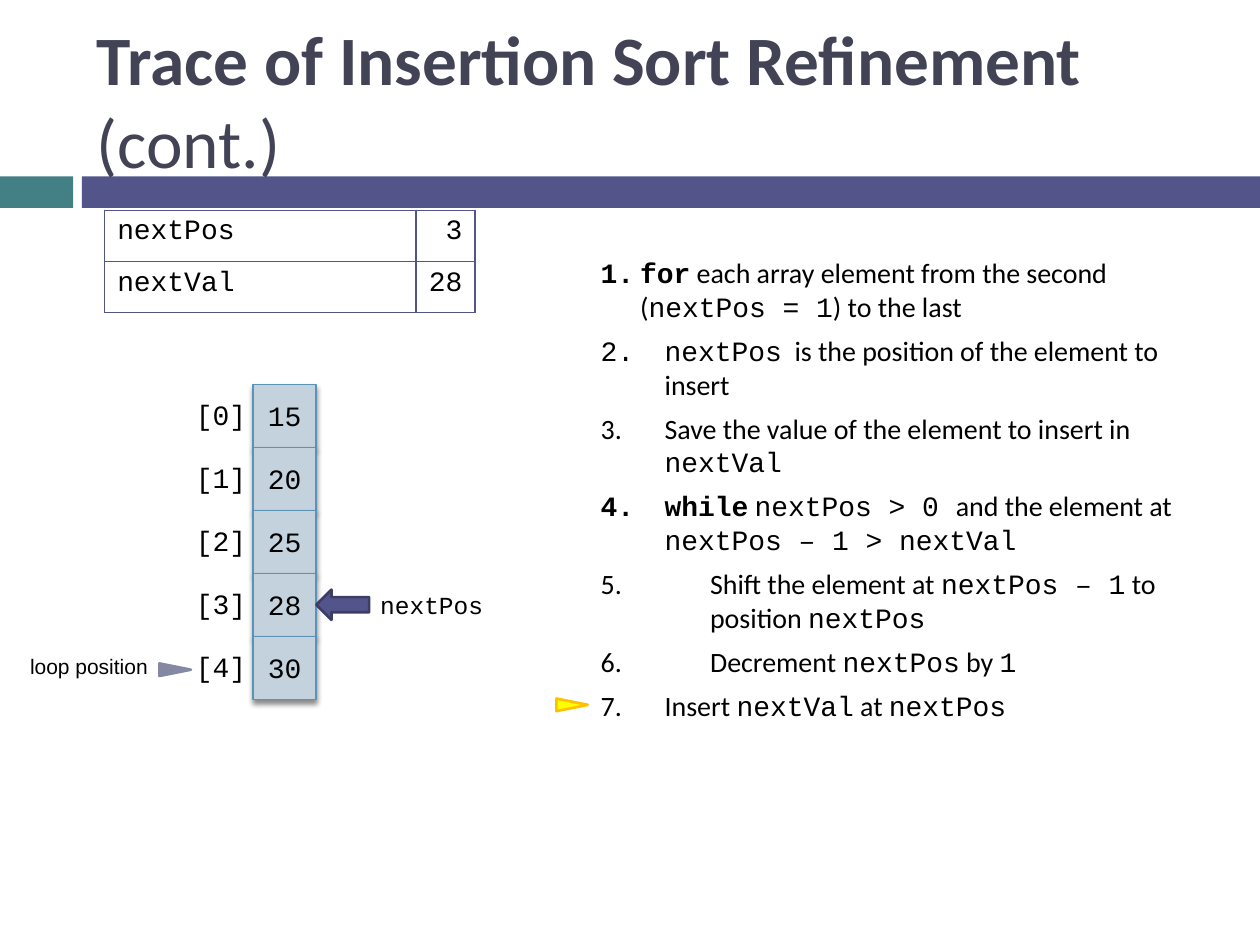
import pptx
import pptx.util
import pptx.dml.color
import pptx.enum.shapes
import pptx.enum.text
import pptx.oxml
import pptx.oxml.ns

Pt = pptx.util.Pt
SHAPE = pptx.enum.shapes.MSO_SHAPE
ALIGN = pptx.enum.text.PP_ALIGN
ANCHOR = pptx.enum.text.MSO_ANCHOR
NS = pptx.oxml.ns.nsdecls("a")

COLORS = {
    "teal": "438086", "indigo": "53548A", "indigo_edge": "3D3E66",
    "title": "424456", "text": "000000", "cell": "C4D2DE",
    "cell_edge": "5C92B5", "loop": "8588A2", "step": "FFFF00",
    "step_edge": "FFC000",
}
PROSE, CODE, LABEL = "Calibri", "Courier New", "Arial"

TITLE = [("Trace of Insertion Sort Refinement ", PROSE, True), ("(cont.)", PROSE, False)]
STEPS = [
    (22.5, [("for", CODE, True), (" each array element from the second (", PROSE, False),
            ("nextPos = 1", CODE, False), (") to the last", PROSE, False)]),
    (36.5, [("nextPos", CODE, False),
            ("  is the position of the element to insert", PROSE, False)]),
    (36.5, [("Save the value of the element to insert in ", PROSE, False),
            ("nextVal", CODE, False)]),
    (36.5, [("while", CODE, True), (" ", PROSE, True), ("nextPos > 0 ", CODE, False),
            ("and the element at ", PROSE, False), ("nextPos – 1 > nextVal", CODE, False)]),
    (62.5, [("Shift the element at ", PROSE, False), ("nextPos – 1", CODE, False),
            (" to position ", PROSE, False), ("nextPos", CODE, False)]),
    (62.5, [("Decrement ", PROSE, False), ("nextPos", CODE, False),
            (" by ", PROSE, False), ("1", CODE, False)]),
    (36.5, [("Insert ", PROSE, False), ("nextVal", CODE, False),
            (" at ", PROSE, False), ("nextPos", CODE, False)]),
]
VARIABLES = [("nextPos", "3"), ("nextVal", "28")]
ARRAY = ["15", "20", "25", "28", "30"]
ARRAY_LEFT, ARRAY_TOP, CELL = 144.7, 219.6, 36

BARS = [(0, 41.8, "teal"), (46.8, 673.2, "indigo")]
POINTERS = [
    (SHAPE.ISOSCELES_TRIANGLE, (323.3, 393.8, 7.2, 18), "step", "step_edge"),
    (SHAPE.ISOSCELES_TRIANGLE, (96.5, 373.7, 7.2, 18), "loop", "loop"),
    (SHAPE.DOWN_ARROW, (187.2, 330.5, 17.3, 30.2), "indigo", "indigo_edge"),
]
CAPTIONS = [
    ((10.1, 370.1, 93.6, 21.6), "loop position", LABEL, 12),
    ((210.2, 333.4, 77, 24.5), "nextPos", CODE, 14),
]


def rgb(name):
    return pptx.dml.color.RGBColor.from_string(COLORS[name])


def add_runs(paragraph, runs, size, color="text"):
    for text, font, bold in runs:
        run = paragraph.add_run()
        run.text = text
        run.font.name = font
        run.font.size = Pt(size)
        run.font.bold = bold
        run.font.color.rgb = rgb(color)


def add_text(slide, box, anchor=ANCHOR.TOP):
    frame = slide.shapes.add_textbox(*map(Pt, box)).text_frame
    frame.word_wrap = True
    frame.vertical_anchor = anchor
    return frame


def add_figure(slide, kind, box, fill, edge=None, width=1.5):
    figure = slide.shapes.add_shape(kind, *map(Pt, box))
    figure.shadow.inherit = False
    figure.fill.solid()
    figure.fill.fore_color.rgb = rgb(fill)
    if edge:
        figure.line.color.rgb = rgb(edge)
        figure.line.width = Pt(width)
    else:
        figure.line.fill.background()
    return figure


def cast_shadow(figure):
    effects = figure._element.spPr.find(pptx.oxml.ns.qn("a:effectLst"))
    effects.append(pptx.oxml.parse_xml(
        f'<a:outerShdw {NS} blurRad="{Pt(3)}" dist="{Pt(2.4)}" dir="5400000" rotWithShape="0">'
        '<a:srgbClr val="000000"><a:alpha val="45000"/></a:srgbClr></a:outerShdw>'))


def add_steps(slide):
    frame = add_text(slide, (336.2, 142.6, 342, 301.7))
    for i, (indent, runs) in enumerate(STEPS):
        paragraph = frame.paragraphs[0] if i == 0 else frame.add_paragraph()
        paragraph.space_after = Pt(6)
        add_runs(paragraph, runs, 16)
        properties = paragraph._p.get_or_add_pPr()
        properties.set("marL", str(Pt(indent)))
        properties.set("indent", str(-Pt(indent)))
        properties.append(pptx.oxml.parse_xml(f'<a:buAutoNum {NS} type="arabicPeriod"/>'))


def add_array(slide):
    for i, value in enumerate(ARRAY):
        top = ARRAY_TOP + i * CELL
        cell = add_figure(slide, SHAPE.RECTANGLE, (ARRAY_LEFT, top, CELL, CELL),
                          "cell", "cell_edge", 0.79)
        cast_shadow(cell)
        cell.text_frame.word_wrap = False
        index = add_text(slide, (100.1, top + 4.3, 52.6, 26.6))
        for frame, text in ((cell.text_frame, value), (index, f"[{i}]")):
            frame.paragraphs[0].alignment = ALIGN.CENTER
            add_runs(frame.paragraphs[0], [(text, CODE, False)], 16)


def add_variables(slide):
    table = slide.shapes.add_table(len(VARIABLES), 2, Pt(59.8), Pt(120.2),
                                   Pt(211.6), Pt(58.4)).table
    table.first_row = table.horz_banding = False
    for column, width in zip(table.columns, (177.8, 33.8)):
        column.width = Pt(width)
    for r, row in enumerate(VARIABLES):
        for c, text in enumerate(row):
            cell = table.cell(r, c)
            paragraph = cell.text_frame.paragraphs[0]
            paragraph.alignment = ALIGN.RIGHT if c else ALIGN.LEFT
            add_runs(paragraph, [(text, CODE, False)], 16)
            properties = cell._tc.get_or_add_tcPr()
            for side in ("lnL", "lnR", "lnT", "lnB"):
                properties.append(pptx.oxml.parse_xml(
                    f'<a:{side} {NS} w="{Pt(1)}"><a:solidFill>'
                    f'<a:srgbClr val="{COLORS["indigo"]}"/></a:solidFill></a:{side}>'))
            cell.fill.background()


def main():
    deck = pptx.Presentation()
    deck.slide_width, deck.slide_height = Pt(720), Pt(540)
    slide = deck.slides.add_slide(deck.slide_layouts[6])
    for left, width, fill in BARS:
        add_figure(slide, SHAPE.RECTANGLE, (left, 100.8, width, 18), fill)
    title = add_text(slide, (48.2, 18, 642.2, 77.8), ANCHOR.MIDDLE)
    add_runs(title.paragraphs[0], TITLE, 39.6, "title")
    add_steps(slide)
    add_array(slide)
    add_variables(slide)
    for kind, box, fill, edge in POINTERS:
        add_figure(slide, kind, box, fill, edge).rotation = 90
    for box, text, font, size in CAPTIONS:
        add_runs(add_text(slide, box).paragraphs[0], [(text, font, False)], size)
    deck.save("out.pptx")


if __name__ == "__main__":
    main()
